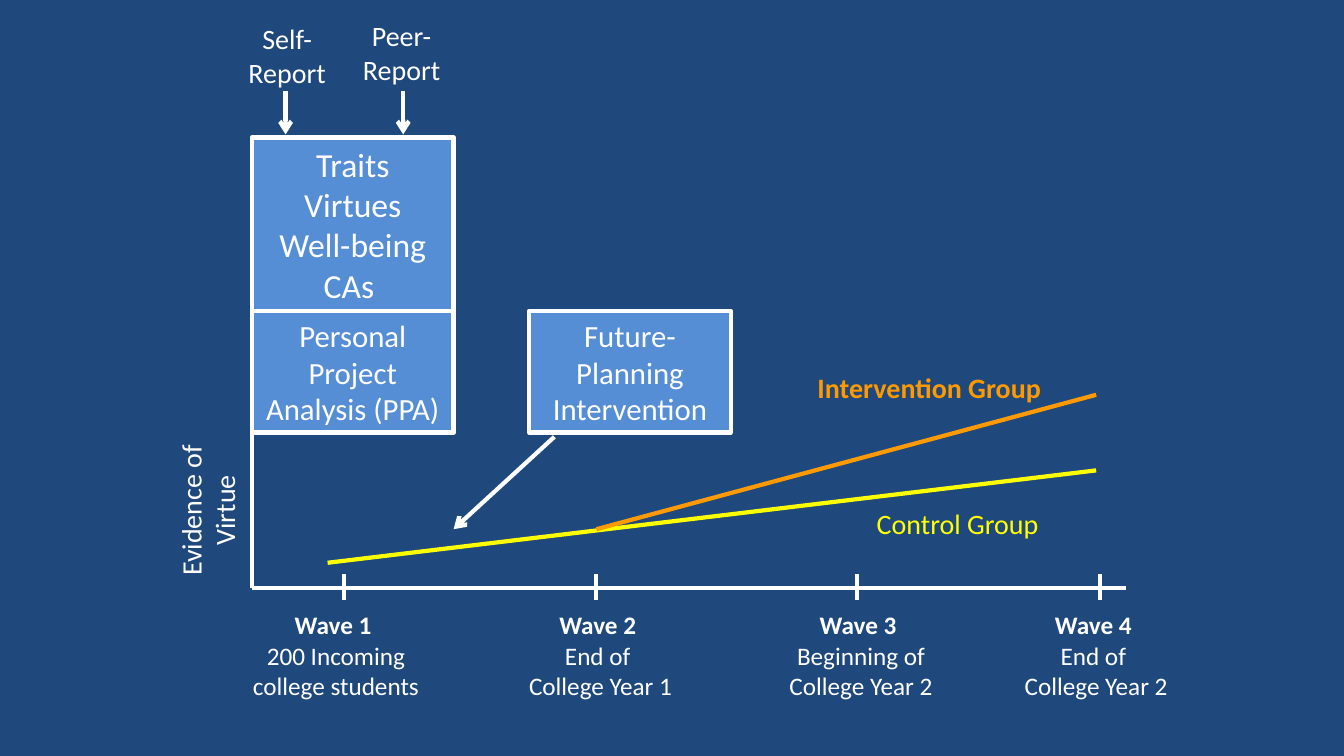
from dataclasses import dataclass

from lxml.etree import SubElement
from pptx import Presentation
from pptx.dml.color import RGBColor
from pptx.enum.shapes import MSO_CONNECTOR, MSO_SHAPE
from pptx.enum.text import MSO_ANCHOR, MSO_AUTO_SIZE, PP_ALIGN
from pptx.oxml.ns import qn
from pptx.util import Pt

EMU_PER_PX = 9525


@dataclass(frozen=True)
class Theme:
    """Colours, font and point sizes of the slide."""
    background: str = "1F497D"
    box: str = "558ED5"
    white: str = "FFFFFF"
    control: str = "FFFF00"
    intervention: str = "FF9900"
    font: str = "Calibri"
    measures_size: int = 24
    box_size: int = 22
    label_size: int = 20
    wave_size: int = 18
    line_width: int = 3


def px(length):
    """Turn pixels into EMU."""
    return length * EMU_PER_PX


def color(value):
    """Turn a hex value into a colour."""
    return RGBColor.from_string(value)


def write_text(frame, text, *, font, size, fill, bold=False, bold_first=False,
               anchor=MSO_ANCHOR.TOP):
    """Write centred paragraphs, one for each line of the text."""
    frame.word_wrap = True
    frame.auto_size = MSO_AUTO_SIZE.SHAPE_TO_FIT_TEXT
    frame.vertical_anchor = anchor
    for index, line in enumerate(text.split("\n")):
        paragraph = frame.add_paragraph() if index else frame.paragraphs[0]
        paragraph.alignment = PP_ALIGN.CENTER
        run = paragraph.add_run()
        run.text = line
        run.font.name = font
        run.font.size = Pt(size)
        run.font.bold = bold or (bold_first and index == 0)
        run.font.color.rgb = color(fill)


class StudyDiagram:
    """Draws the study design on one slide."""

    def __init__(self, slide, theme):
        """Keep the slide and theme, and paint the background."""
        self.slide = slide
        self.theme = theme
        slide.background.fill.solid()
        slide.background.fill.fore_color.rgb = color(theme.background)

    def line(self, start, end, stroke=None, arrow=False):
        """Draw a straight line, with an open arrowhead at its end if asked."""
        connector = self.slide.shapes.add_connector(
            MSO_CONNECTOR.STRAIGHT, *map(px, start + end))
        connector.line.color.rgb = color(stroke or self.theme.white)
        connector.line.width = Pt(self.theme.line_width)
        if arrow:
            SubElement(connector.line._get_or_add_ln(), qn("a:tailEnd"), type="arrow")
        SubElement(connector._element.spPr, qn("a:effectLst"))

    def box(self, area, text, size):
        """Draw a filled, outlined rectangle with text."""
        shape = self.slide.shapes.add_shape(MSO_SHAPE.RECTANGLE, *map(px, area))
        shape.shadow.inherit = False
        shape.fill.solid()
        shape.fill.fore_color.rgb = color(self.theme.box)
        shape.line.color.rgb = color(self.theme.white)
        shape.line.width = Pt(self.theme.line_width)
        write_text(shape.text_frame, text, font=self.theme.font, size=size,
                   fill=self.theme.white, anchor=MSO_ANCHOR.MIDDLE)

    def label(self, area, text, size=None, fill=None, rotation=0, **text_format):
        """Place a text box."""
        shape = self.slide.shapes.add_textbox(*map(px, area))
        shape.rotation = rotation
        write_text(shape.text_frame, text, font=self.theme.font,
                   size=size or self.theme.label_size,
                   fill=fill or self.theme.white, **text_format)


def main():
    """Build and save the slide."""
    presentation = Presentation()
    presentation.slide_width = px(1280)
    presentation.slide_height = px(720)
    slide = presentation.slides.add_slide(presentation.slide_layouts[6])
    theme = Theme()
    diagram = StudyDiagram(slide, theme)

    axis_x, axis_y = 240, 560
    diagram.line((axis_x, 296), (axis_x, axis_y))
    diagram.line((1072, axis_y), (axis_x, axis_y))
    diagram.label((98, 449, 199, 74), "Evidence of Virtue", rotation=270)

    waves = [
        (328, 228, "Wave 1 \n200 Incoming college students"),
        (568, 480, "Wave 2 \nEnd of \nCollege Year 1"),
        (816, 728, "Wave 3 \nBeginning of College Year 2"),
        (1048, 952, "Wave 4 \nEnd of \nCollege Year 2"),
    ]
    for tick_x, label_x, text in waves:
        diagram.line((tick_x, axis_y - 13), (tick_x, axis_y + 11))
        diagram.label((label_x, 576, 184, 97), text, theme.wave_size, bold_first=True)

    diagram.box((axis_x, 131, 192, 165), "Traits\nVirtues\nWell-being\nCAs ",
                theme.measures_size)
    for box_x, text in [(axis_x, "Personal Project Analysis (PPA)"),
                        (504, "Future-Planning Intervention")]:
        diagram.box((box_x, 296, 192, 116), text, theme.box_size)

    reports = [(219, 16, 272, "Self-Report"), (328, 13, 384, "Peer-Report")]
    for label_x, label_y, arrow_x, text in reports:
        diagram.label((label_x, label_y, 109, 74), text)
        diagram.line((arrow_x, 87), (arrow_x, 128), arrow=True)

    diagram.line((1044, 448), (312, 536), theme.control)
    diagram.line((1044, 376), (568, 504), theme.intervention)
    diagram.line((528, 416), (432, 504), arrow=True)
    diagram.label((760, 348, 250, 42), "Intervention Group",
                  fill=theme.intervention, bold=True)
    diagram.label((787, 478, 250, 42), "Control Group", fill=theme.control)

    presentation.save("out.pptx")


if __name__ == "__main__":
    main()
